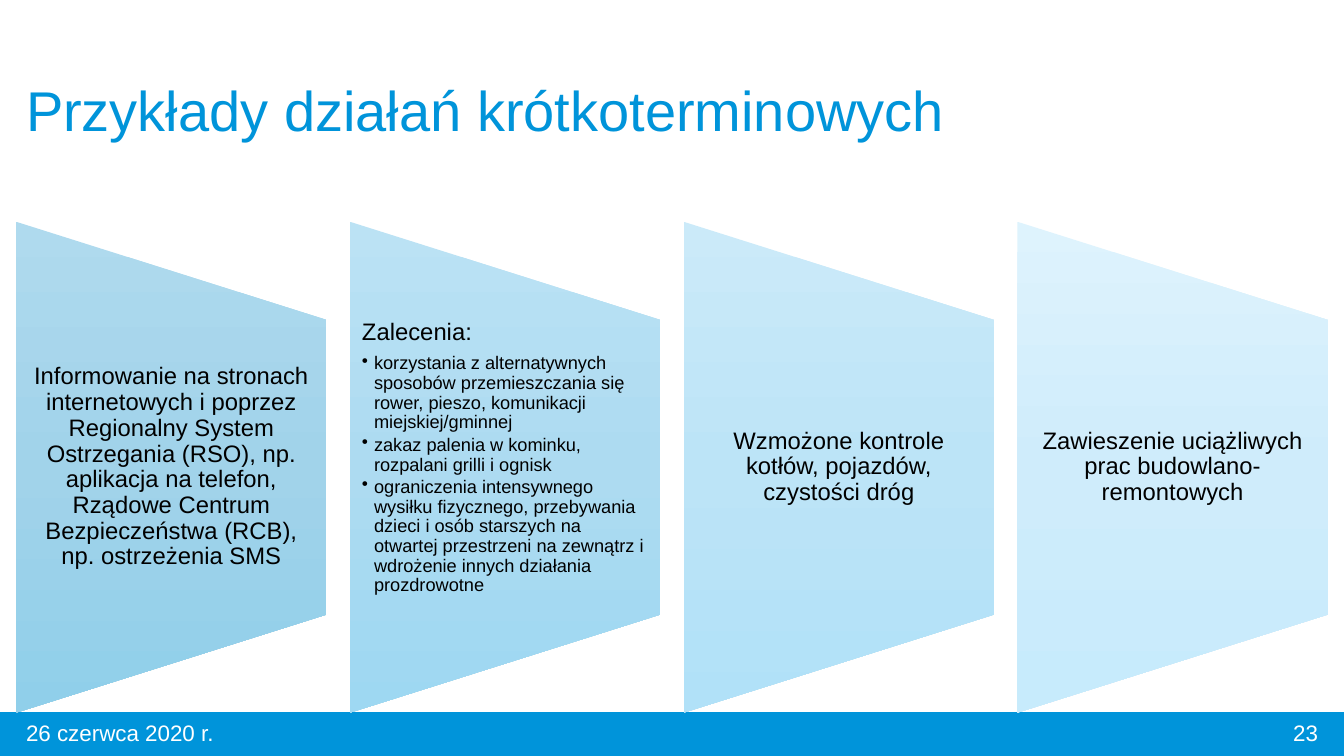
import copy
from dataclasses import dataclass
import pptx
import pptx.util
import pptx.oxml
import pptx.oxml.ns
import pptx.dml.color
import pptx.enum.shapes
import pptx.enum.text

Inches = pptx.util.Inches
Pt = pptx.util.Pt
Align = pptx.enum.text.PP_ALIGN
Anchor = pptx.enum.text.MSO_ANCHOR
Shape = pptx.enum.shapes.MSO_SHAPE
qn = pptx.oxml.ns.qn


@dataclass(frozen=True)
class Theme:
    font: str = "Arial"
    blue: str = "0094DA"
    black: str = "000000"
    white: str = "FFFFFF"
    title: int = 40
    body: int = 17
    item: int = 13
    foot: int = 16
    fades: tuple = (
        ("AFDAEE", "A1D3EA", "90CFEA"),
        ("BBE2F4", "ADDBF1", "9ED8F2"),
        ("CBEAF9", "BCE4F7", "B1E1F8"),
        ("DEF3FD", "CFECFB", "C7EBFC"),
    )


THEME = Theme()
WIDE, HIGH = 13.33, 7.5
EDGE, STEP, COL = 0.16, 3.31, 3.08
TOP, TALL = 2.2, 4.87
INNER = 0.6 * TALL
FOOT = 7.07

CARDS = (
    ("Informowanie na stronach internetowych i poprzez Regionalny System "
     "Ostrzegania (RSO), np. aplikacja na telefon, Rządowe Centrum "
     "Bezpieczeństwa (RCB), np. ostrzeżenia SMS",),
    ("Zalecenia:",
     "korzystania z alternatywnych sposobów przemieszczania się rower, "
     "pieszo, komunikacji miejskiej/gminnej",
     "zakaz palenia w kominku, rozpalani grilli i ognisk",
     "ograniczenia intensywnego wysiłku fizycznego, przebywania dzieci i osób "
     "starszych na otwartej przestrzeni na zewnątrz i wdrożenie innych "
     "działania prozdrowotne"),
    ("Wzmożone kontrole kotłów, pojazdów, czystości dróg",),
    ("Zawieszenie uciążliwych prac budowlano-remontowych",),
)


def color(code):
    return pptx.dml.color.RGBColor.from_string(code)


def frame(slide, left, top, width, height, anchor=Anchor.MIDDLE, side=0.1, ends=0.05):
    box = slide.shapes.add_textbox(*map(Inches, (left, top, width, height)))
    area = box.text_frame
    area.word_wrap = True
    area.vertical_anchor = anchor
    area.margin_left = area.margin_right = Inches(side)
    area.margin_top = area.margin_bottom = Inches(ends)
    return area


def write(para, text, size, tint=THEME.black, align=Align.LEFT, line=1.0, after=0):
    para.alignment = align
    para.line_spacing = line
    para.space_after = Pt(after)
    run = para.add_run()
    run.text = text
    run.font.name = THEME.font
    run.font.size = Pt(size)
    run.font.color.rgb = color(tint)


def bullet(para):
    props = para._p.get_or_add_pPr()
    props.set("marL", str(Inches(0.12)))
    props.set("indent", str(Inches(-0.12)))
    mark = pptx.oxml.parse_xml(
        f'<a:buChar {pptx.oxml.ns.nsdecls("a")} char="•"/>')
    props.append(mark)


def panel(slide, left, fade):
    shape = slide.shapes.add_shape(
        Shape.FLOWCHART_MANUAL_OPERATION,
        Inches(left + (COL - TALL) / 2), Inches(TOP + (TALL - COL) / 2),
        Inches(TALL), Inches(COL))
    shape.rotation = 270
    shape.shadow.inherit = False
    shape.line.fill.background()
    shape.fill.gradient()
    shape.fill.gradient_angle = 270
    grad = shape._element.spPr.find(qn("a:gradFill"))
    grad.set("rotWithShape", "0")
    stops = grad.find(qn("a:gsLst"))
    stops.insert(1, copy.deepcopy(stops[0]))
    for index, (stop, tint) in enumerate(zip(shape.fill.gradient_stops, fade)):
        stop.position = index / 2
        stop.color.rgb = color(tint)


def card(slide, col, lines, fade):
    left = EDGE + col * STEP
    panel(slide, left, fade)
    items = lines[1:]
    area = frame(slide, left, TOP + (TALL - INNER) / 2, COL, INNER,
                 Anchor.TOP if items else Anchor.MIDDLE, side=0.12, ends=0)
    write(area.paragraphs[0], lines[0], THEME.body, line=0.9,
          align=Align.LEFT if items else Align.CENTER, after=6 if items else 0)
    for text in items:
        para = area.add_paragraph()
        bullet(para)
        write(para, text, THEME.item, line=0.9, after=2)


def band(slide):
    bar = slide.shapes.add_shape(
        Shape.RECTANGLE, 0, Inches(FOOT), Inches(WIDE), Inches(HIGH - FOOT))
    bar.shadow.inherit = False
    bar.fill.solid()
    bar.fill.fore_color.rgb = bar.line.color.rgb = color(THEME.blue)
    bar.line.width = Pt(1)


def label(slide, text, left, width, align):
    area = frame(slide, left, FOOT, width, 0.4)
    write(area.paragraphs[0], text, THEME.foot, tint=THEME.white, align=align)


def main():
    deck = pptx.Presentation()
    deck.slide_width, deck.slide_height = Inches(WIDE), Inches(HIGH)
    slide = deck.slides.add_slide(deck.slide_layouts[6])
    band(slide)
    title = frame(slide, EDGE, 0.4, 10.22, 1.45)
    write(title.paragraphs[0], "Przykłady działań krótkoterminowych",
          THEME.title, tint=THEME.blue, line=0.9)
    for col, (lines, fade) in enumerate(zip(CARDS, THEME.fades)):
        card(slide, col, lines, fade)
    label(slide, "26 czerwca 2020 r.", EDGE, 4, Align.LEFT)
    label(slide, "23", WIDE - EDGE - 3, 3, Align.RIGHT)
    deck.save("out.pptx")


if __name__ == "__main__":
    main()
